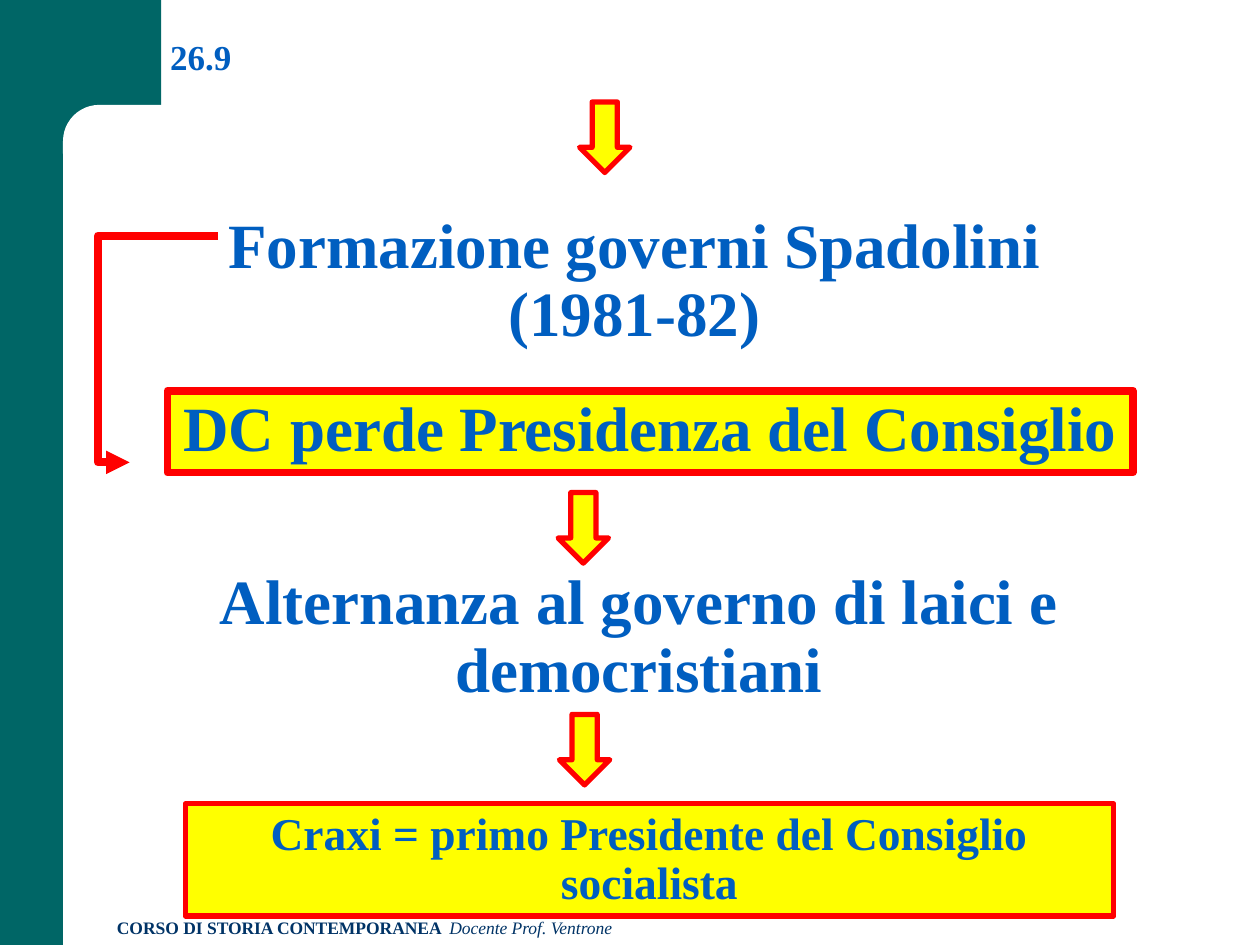
from dataclasses import dataclass

from lxml import etree
from pptx import Presentation, util as u
from pptx.dml.color import RGBColor
from pptx.enum import shapes, text
from pptx.oxml.ns import qn


@dataclass(frozen=True)
class Theme:
    font: str = "Times New Roman"
    band: str = "006666"
    paper: str = "FFFFFF"
    ink: str = "005EC0"
    footer_ink: str = "003366"
    accent: str = "FF0000"
    highlight: str = "FFFF00"
    statement: int = 36
    conclusion: int = 26
    number: int = 20
    footer: int = 10
    thick: float = 4.5
    thin: float = 3


THEME = Theme()
COLUMNS, ROWS = 100, 75
WIDTH, HEIGHT = u.Inches(10), u.Inches(7.5)


@dataclass(frozen=True)
class Box:
    """An area in grid columns and rows."""
    left: float
    top: float
    width: float
    height: float

    def share(self, x, y, width, height):
        """A box given in shares of this one."""
        return Box(self.left + x * self.width, self.top + y * self.height,
                   width * self.width, height * self.height)

    def point(self, x, y):
        return (round((self.left + x * self.width) * WIDTH / COLUMNS),
                round((self.top + y * self.height) * HEIGHT / ROWS))

    def emu(self):
        left, top = self.point(0, 0)
        right, bottom = self.point(1, 1)
        return left, top, right - left, bottom - top


def write(frame, *runs, size, color=THEME.ink, align=text.PP_ALIGN.CENTER,
          anchor=text.MSO_ANCHOR.MIDDLE, spacing=0.9):
    """Fill a text frame with runs of (words, bold, italic)."""
    frame.word_wrap = True
    frame.auto_size = text.MSO_AUTO_SIZE.NONE
    frame.vertical_anchor = anchor
    paragraph = frame.paragraphs[0]
    paragraph.alignment = align
    paragraph.line_spacing = spacing
    for words, bold, italic in runs:
        run = paragraph.add_run()
        run.text = words
        run.font.name = THEME.font
        run.font.size = u.Pt(size)
        run.font.bold, run.font.italic = bold, italic
        run.font.color.rgb = RGBColor.from_string(color)


def add_block(slide, kind, box, fill, line_width=0):
    block = slide.shapes.add_shape(kind, *box.emu())
    block.shadow.inherit = False
    block.fill.solid()
    block.fill.fore_color.rgb = RGBColor.from_string(fill)
    if line_width:
        block.line.color.rgb = RGBColor.from_string(THEME.accent)
        block.line.width = u.Pt(line_width)
    else:
        block.line.fill.background()
    return block


def add_frame(slide, box):
    """Green band down the left and across the top corner, rounded inside."""
    rectangle = shapes.MSO_SHAPE.RECTANGLE
    add_block(slide, rectangle, box.share(0, 0, 0.05, 1), THEME.band)
    add_block(slide, rectangle, box.share(0, 0, 0.128, 0.156), THEME.band)
    corner = add_block(slide, shapes.MSO_SHAPE.ROUNDED_RECTANGLE,
                       box.share(0.05, 0.111, 0.592, 0.089), THEME.paper)
    corner.adjustments[0] = 0.43


def add_footer(slide, box):
    footer = slide.shapes.add_textbox(*box.emu())
    write(footer.text_frame,
          ("CORSO DI STORIA CONTEMPORANEA  ", True, False),
          ("Docente Prof. Ventrone", False, True),
          size=THEME.footer, color=THEME.footer_ink, spacing=1,
          align=text.PP_ALIGN.LEFT, anchor=text.MSO_ANCHOR.TOP)


def add_number(slide, box, number):
    title = slide.shapes.title
    title.left, title.top, title.width, title.height = box.emu()
    write(title.text_frame, (number, True, False), size=THEME.number, spacing=1,
          align=text.PP_ALIGN.LEFT, anchor=text.MSO_ANCHOR.TOP)
    slide.shapes._spTree.append(title._element)  # in front of the frame


def add_statement(slide, box, words):
    statement = slide.shapes.add_textbox(*box.emu())
    write(statement.text_frame, (words, True, False), size=THEME.statement)


def add_highlight(slide, box, words, size, line_width):
    block = add_block(slide, shapes.MSO_SHAPE.RECTANGLE, box,
                      THEME.highlight, line_width)
    write(block.text_frame, (words, True, False), size=size)


def add_down_arrow(slide, left, top):
    add_block(slide, shapes.MSO_SHAPE.DOWN_ARROW, Box(left, top, 4, 5.6),
              THEME.highlight, THEME.thin)


def add_consequence(slide, box, overshoot):
    """Elbow arrow from the top right of the box, out to the left and back."""
    elbow = slide.shapes.add_connector(
        shapes.MSO_CONNECTOR.ELBOW, *box.point(1, 0), *box.point(0, 1))
    elbow.line.color.rgb = RGBColor.from_string(THEME.accent)
    elbow.line.width = u.Pt(THEME.thick)
    properties = elbow._element.spPr
    guides = properties.find(qn("a:prstGeom")).get_or_add_avLst()
    etree.SubElement(guides, qn("a:gd"), name="adj1",
                     fmla=f"val {round((1 + overshoot) * 100000)}")
    etree.SubElement(properties.find(qn("a:ln")), qn("a:tailEnd"), type="triangle")
    etree.SubElement(properties, qn("a:effectLst"))


def main():
    deck = Presentation()
    deck.slide_width, deck.slide_height = WIDTH, HEIGHT
    slide = deck.slides.add_slide(deck.slide_layouts[5])

    add_frame(slide, Box(0, 0, COLUMNS, ROWS))
    add_footer(slide, Box(8.3, 72.3, 61.7, 2.7))
    add_number(slide, Box(12.5, 2.3, 10.9, 4.4), "26.9")
    add_statement(slide, Box(15.6, 16.4, 69.5, 11.9),
                  "Formazione governi Spadolini (1981-82)")
    add_highlight(slide, Box(13.3, 31, 76.6, 6.5),
                  "DC perde Presidenza del Consiglio",
                  THEME.statement, THEME.thick)
    add_statement(slide, Box(14, 44.7, 73.4, 11.9),
                  "Alternanza al governo di laici e democristiani")
    add_highlight(slide, Box(14.7, 63.8, 73.7, 8.9),
                  "Craxi = primo Presidente del Consiglio socialista",
                  THEME.conclusion, THEME.thin)
    add_consequence(slide, Box(10.3, 18.7, 7, 18), overshoot=0.36)
    for left, top in ((46, 8.1), (44.3, 39.1), (44.4, 56.7)):
        add_down_arrow(slide, left, top)

    deck.save("out.pptx")


if __name__ == "__main__":
    main()
